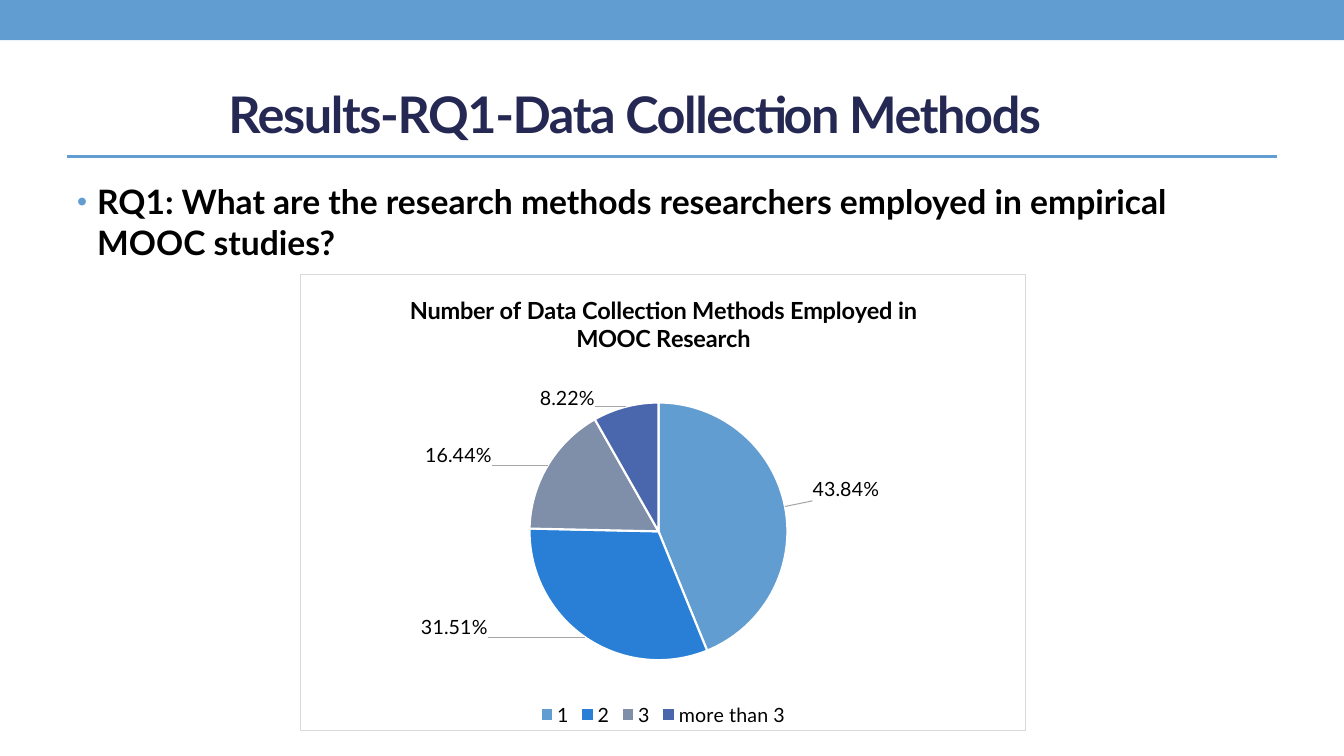
from dataclasses import dataclass

from lxml import etree
from pptx import Presentation
from pptx.chart.data import CategoryChartData
from pptx.dml.color import RGBColor
from pptx.enum.chart import XL_CHART_TYPE, XL_LABEL_POSITION, XL_LEGEND_POSITION
from pptx.enum.shapes import MSO_CONNECTOR, MSO_SHAPE
from pptx.enum.text import MSO_ANCHOR
from pptx.oxml import parse_xml
from pptx.oxml.ns import nsdecls, qn
from pptx.util import Pt

PIE = XL_CHART_TYPE.PIE
OUTSIDE_END = XL_LABEL_POSITION.OUTSIDE_END
LEGEND_BOTTOM = XL_LEGEND_POSITION.BOTTOM
STRAIGHT = MSO_CONNECTOR.STRAIGHT
RECTANGLE = MSO_SHAPE.RECTANGLE
TOP, MIDDLE = MSO_ANCHOR.TOP, MSO_ANCHOR.MIDDLE


@dataclass(frozen=True)
class Theme:
    font: str = "Lato"
    accent: str = "629DD1"
    heading: str = "242852"
    text: str = "000000"
    paper: str = "FFFFFF"
    border: str = "D9D9D9"
    leader: str = "A6A6A6"
    heading_size: float = 36
    question_size: float = 24
    chart_title_size: float = 16.8
    chart_size: float = 14


THEME = Theme()
PERCENT = "0.00%"

# Category, share, slice colour, label offset as a fraction of the chart
SLICES = [
    ("1", 0.4384, "629DD1", (0.03, -0.01)),
    ("2", 0.3151, "297FD5", (-0.13, -0.06)),
    ("3", 0.1644, "7F8FA9", (-0.07, 0.01)),
    ("more than 3", 0.0822, "4A66AC", (-0.04, 0.02)),
]


def rgb(value):
    return RGBColor.from_string(value)


def style_font(font, size, color, bold=False):
    font.name = THEME.font
    font.size = Pt(size)
    font.bold = bold
    font.color.rgb = rgb(color)


def add_band(slide, left, top, width, height):
    band = slide.shapes.add_shape(RECTANGLE, Pt(left), Pt(top), Pt(width), Pt(height))
    band.shadow.inherit = False
    band.fill.solid()
    band.fill.fore_color.rgb = rgb(THEME.accent)
    band.line.fill.background()


def add_rule(slide, left, right, y):
    rule = slide.shapes.add_connector(STRAIGHT, Pt(left), Pt(y), Pt(right), Pt(y))
    rule.line.color.rgb = rgb(THEME.accent)
    rule.line.width = Pt(2.08)
    etree.SubElement(rule._element.spPr, qn("a:effectLst"))


def add_text(slide, box, wording, size, color, anchor):
    """Add one bold paragraph and return it."""
    frame = slide.shapes.add_textbox(*map(Pt, box)).text_frame
    frame.word_wrap = True
    frame.vertical_anchor = anchor
    frame.text = wording
    paragraph = frame.paragraphs[0]
    style_font(paragraph.runs[0].font, size, color, bold=True)
    return paragraph


def add_bullet(paragraph):
    properties = paragraph._p.get_or_add_pPr()
    indent = Pt(14.4)
    properties.set("marL", str(indent))
    properties.set("indent", str(-indent))
    color = etree.SubElement(properties, qn("a:buClr"))
    etree.SubElement(color, qn("a:srgbClr"), val=THEME.accent)
    etree.SubElement(properties, qn("a:buSzPct"), val="85000")
    etree.SubElement(properties, qn("a:buFont"), typeface="Arial")
    etree.SubElement(properties, qn("a:buChar"), char="•")


def manual_layout(**values):
    """Build a chart layout element from fractions of the chart area."""
    layout = etree.Element(qn("c:layout"))
    manual = etree.SubElement(layout, qn("c:manualLayout"))
    for tag, value in values.items():
        etree.SubElement(manual, qn(f"c:{tag}"), val=str(value))
    return layout


def frame_chart(chart):
    """Give the chart area its white fill and thin border."""
    area = parse_xml(
        f'<c:spPr {nsdecls("c", "a")}>'
        f'<a:solidFill><a:srgbClr val="{THEME.paper}"/></a:solidFill>'
        f'<a:ln w="{Pt(0.75)}"><a:solidFill><a:srgbClr val="{THEME.border}"/>'
        "</a:solidFill></a:ln></c:spPr>"
    )
    chart._chartSpace.chart.addnext(area)


def add_leader_lines(labels):
    show = labels._element.find(qn("c:showLeaderLines"))
    if show is None:
        show = etree.SubElement(labels._element, qn("c:showLeaderLines"))
    show.set("val", "1")
    show.addnext(parse_xml(
        f'<c:leaderLines {nsdecls("c", "a")}><c:spPr><a:ln w="{Pt(0.75)}">'
        f'<a:solidFill><a:srgbClr val="{THEME.leader}"/></a:solidFill>'
        "</a:ln></c:spPr></c:leaderLines>"
    ))


def style_slice(point, color, offset):
    point.format.fill.solid()
    point.format.fill.fore_color.rgb = rgb(color)
    point.format.line.color.rgb = rgb(THEME.paper)
    point.format.line.width = Pt(1.5)
    label = point.data_label
    style_font(label.font, THEME.chart_size, THEME.text)
    label.position = OUTSIDE_END
    layout = manual_layout(x=offset[0], y=offset[1])
    label._dLbl.find(qn("c:idx")).addnext(layout)
    number_format = etree.Element(qn("c:numFmt"), formatCode=PERCENT, sourceLinked="0")
    layout.addnext(number_format)


def add_pie(slide, box, title):
    data = CategoryChartData(number_format=PERCENT)
    data.categories = [name for name, *_ in SLICES]
    data.add_series("Series 1", [share for _, share, *_ in SLICES])
    chart = slide.shapes.add_chart(PIE, *map(Pt, box), data).chart
    style_font(chart.font, THEME.chart_size, THEME.text)
    frame_chart(chart)

    # Title and legend
    chart.has_title = True
    chart.chart_title.text_frame.text = title
    title_run = chart.chart_title.text_frame.paragraphs[0].runs[0]
    style_font(title_run.font, THEME.chart_title_size, THEME.text, bold=True)
    chart.has_legend = True
    chart.legend.position = LEGEND_BOTTOM
    chart.legend.include_in_layout = False

    # Plot area
    plot = chart.plots[0]
    plot.vary_by_categories = True
    plot_area = chart._chartSpace.chart.plotArea
    for old_layout in plot_area.findall(qn("c:layout")):
        plot_area.remove(old_layout)
    plot_area.insert(0, manual_layout(
        layoutTarget="inner", xMode="edge", yMode="edge",
        x=0.315, y=0.28, w=0.357, h=0.565))

    # Slices and their labels
    series = plot.series[0]
    labels = series.data_labels
    labels.show_value = True
    labels.number_format = PERCENT
    labels.number_format_is_linked = False
    labels.position = OUTSIDE_END
    add_leader_lines(labels)
    for index, (_, _, color, offset) in enumerate(SLICES):
        style_slice(series.points[index], color, offset)


def main():
    deck = Presentation()
    deck.slide_width, deck.slide_height = Pt(960), Pt(540)
    slide = deck.slides.add_slide(deck.slide_layouts[6])

    # Top band and heading
    add_band(slide, 0, 0, 960, 28.8)
    add_rule(slide, 48, 912, 111.6)
    heading = add_text(slide, (156, 42, 684, 78), "Results-RQ1-Data Collection Methods",
                       THEME.heading_size, THEME.heading, MIDDLE)
    heading.runs[0].font._element.set("spc", "-100")

    # Research question
    question = add_text(
        slide, (48, 126, 864, 384),
        "RQ1: What are the research methods researchers employed in empirical MOOC studies?",
        THEME.question_size, THEME.text, TOP)
    question.space_before = Pt(4.8)
    add_bullet(question)

    # Share of studies by number of methods
    add_pie(slide, (214.5, 196, 518.5, 326.5),
            "Number of Data Collection Methods Employed in MOOC Research")

    deck.save("out.pptx")


if __name__ == "__main__":
    main()
